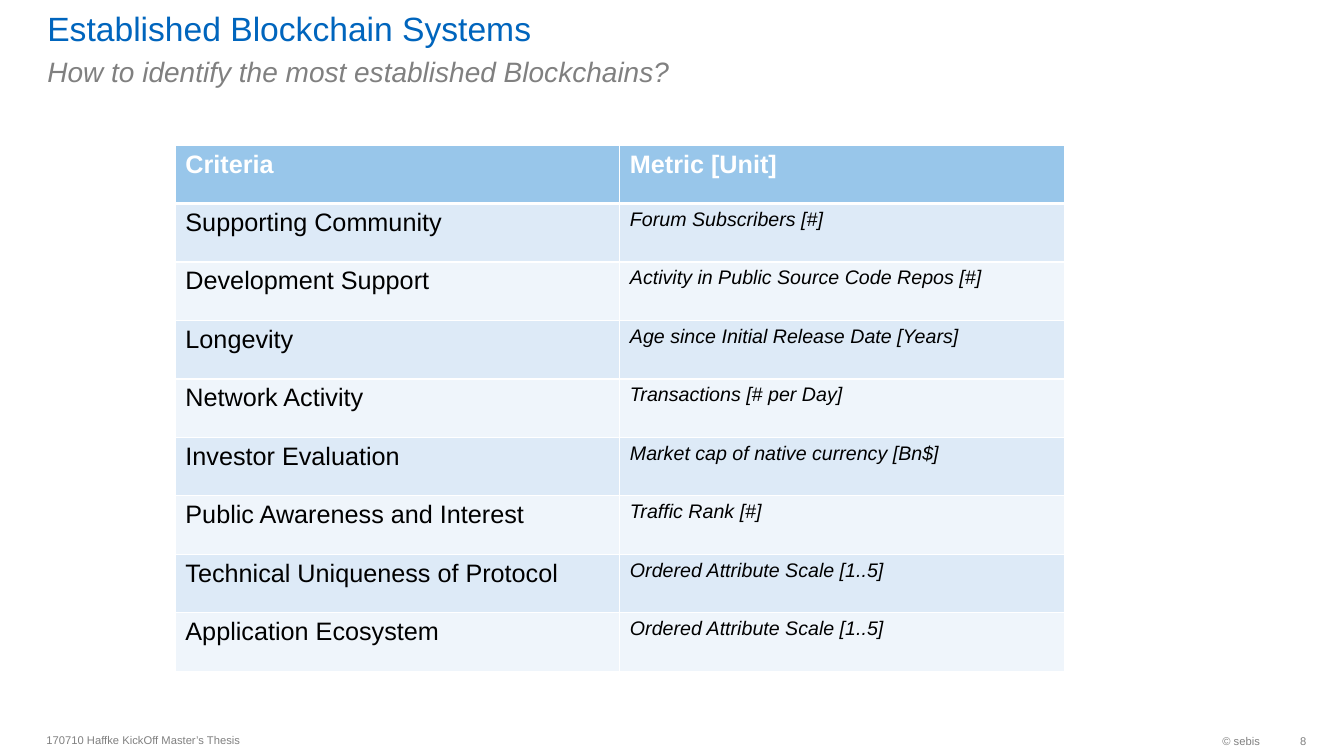
from lxml import etree
from pptx import Presentation
from pptx.dml.color import RGBColor
from pptx.enum.text import MSO_ANCHOR, PP_ALIGN
from pptx.oxml.ns import qn
from pptx.util import Inches, Pt

TOP, MID, LOW = MSO_ANCHOR.TOP, MSO_ANCHOR.MIDDLE, MSO_ANCHOR.BOTTOM
LEFT, RIGHT = PP_ALIGN.LEFT, PP_ALIGN.RIGHT
BLUE = RGBColor(0x00, 0x65, 0xBD)
GREY = RGBColor(0x80, 0x80, 0x80)
WHITE = RGBColor(0xFF, 0xFF, 0xFF)
BLACK = RGBColor(0x00, 0x00, 0x00)
HEAD = RGBColor(0x98, 0xC6, 0xEA)
BANDS = (RGBColor(0xDD, 0xEA, 0xF7), RGBColor(0xEF, 0xF5, 0xFB))
FONT = "Arial"
WIDE, HIGH = Inches(13.33), Inches(7.5)
COLS, ROWS = 160, 90

ITEMS = [
    ("Criteria", "Metric [Unit]"),
    ("Supporting Community", "Forum Subscribers [#]"),
    ("Development Support", "Activity in Public Source Code Repos [#]"),
    ("Longevity", "Age since Initial Release Date [Years]"),
    ("Network Activity", "Transactions [# per Day]"),
    ("Investor Evaluation", "Market cap of native currency [Bn$]"),
    ("Public Awareness and Interest", "Traffic Rank [#]"),
    ("Technical Uniqueness of Protocol", "Ordered Attribute Scale [1..5]"),
    ("Application Ecosystem", "Ordered Attribute Scale [1..5]"),
]


def write(frame, text, size=18, color=BLACK, bold=False, italic=False, align=LEFT):
    """Put one formatted paragraph into a text frame."""
    para = frame.paragraphs[0]
    para.alignment = align
    run = para.add_run()
    run.text = text
    font = run.font
    font.name, font.size = FONT, Pt(size)
    font.bold, font.italic = bold, italic
    font.color.rgb = color


class Page:
    """Hold the slide, its grid and its style."""

    def __init__(self, deck):
        """Add a blank slide."""
        self.slide = deck.slides.add_slide(deck.slide_layouts[6])

    def place(self, col, row, wide, high):
        """Turn grid units into slide lengths."""
        across, down = WIDE / COLS, HIGH / ROWS
        return [round(n) for n in (col * across, row * down, wide * across, high * down)]

    def text(self, area, text, anchor=MID, pad=0.6, right=1.2, **style):
        """Add a text box with its insets in grid units."""
        frame = self.slide.shapes.add_textbox(*self.place(*area)).text_frame
        frame.word_wrap = True
        frame.vertical_anchor = anchor
        frame.margin_left, pad, frame.margin_right, _ = self.place(1.2, pad, right, 0)
        frame.margin_top = frame.margin_bottom = pad
        write(frame, text, **style)

    def edge(self, cell, top, low):
        """Draw white borders round a cell."""
        props = cell._tc.get_or_add_tcPr()
        for side, width in (("L", 1), ("R", 1), ("T", top), ("B", low)):
            line = etree.SubElement(props, qn("a:ln" + side), w=str(Pt(width)))
            fill = etree.SubElement(line, qn("a:solidFill"))
            etree.SubElement(fill, qn("a:srgbClr"), val=str(WHITE))

    def table(self, area, items):
        """Add a table with a header and banded rows."""
        frame = self.slide.shapes.add_table(len(items), len(items[0]), *self.place(*area))
        for row, texts in enumerate(items):
            for col, text in enumerate(texts):
                cell = frame.table.cell(row, col)
                self.edge(cell, 3 if row == 1 else 1, 3 if row == 0 else 1)
                cell.fill.solid()
                if row == 0:
                    cell.fill.fore_color.rgb = HEAD
                    style = {"color": WHITE, "bold": True}
                else:
                    cell.fill.fore_color.rgb = BANDS[(row - 1) % 2]
                    style = {"size": 14, "italic": True} if col else {}
                write(cell.text_frame, text, **style)


def main():
    """Build the slide and save it."""
    deck = Presentation()
    deck.slide_width, deck.slide_height = WIDE, HIGH
    page = Page(deck)
    page.text((4.44, 1.08, 138.96, 4.68), "Established Blockchain Systems",
              anchor=LOW, pad=0, size=24, color=BLUE)
    page.text((4.44, 5.95, 138.96, 5.16), "How to identify the most established Blockchains?",
              anchor=TOP, size=20, color=GREY, italic=True)
    page.table((20.88, 17.28, 105.84, 62.64), ITEMS)
    note = {"size": 8, "color": GREY}
    page.text((4.32, 86.16, 75.6, 3.84), "170710 Haffke KickOff Master’s Thesis", **note)
    page.text((123.12, 86.28, 28.08, 3.84), "© sebis", align=RIGHT, **note)
    page.text((151.2, 86.28, 4.32, 3.84), "8", right=0, align=RIGHT, **note)
    deck.save("out.pptx")


if __name__ == "__main__":
    main()
